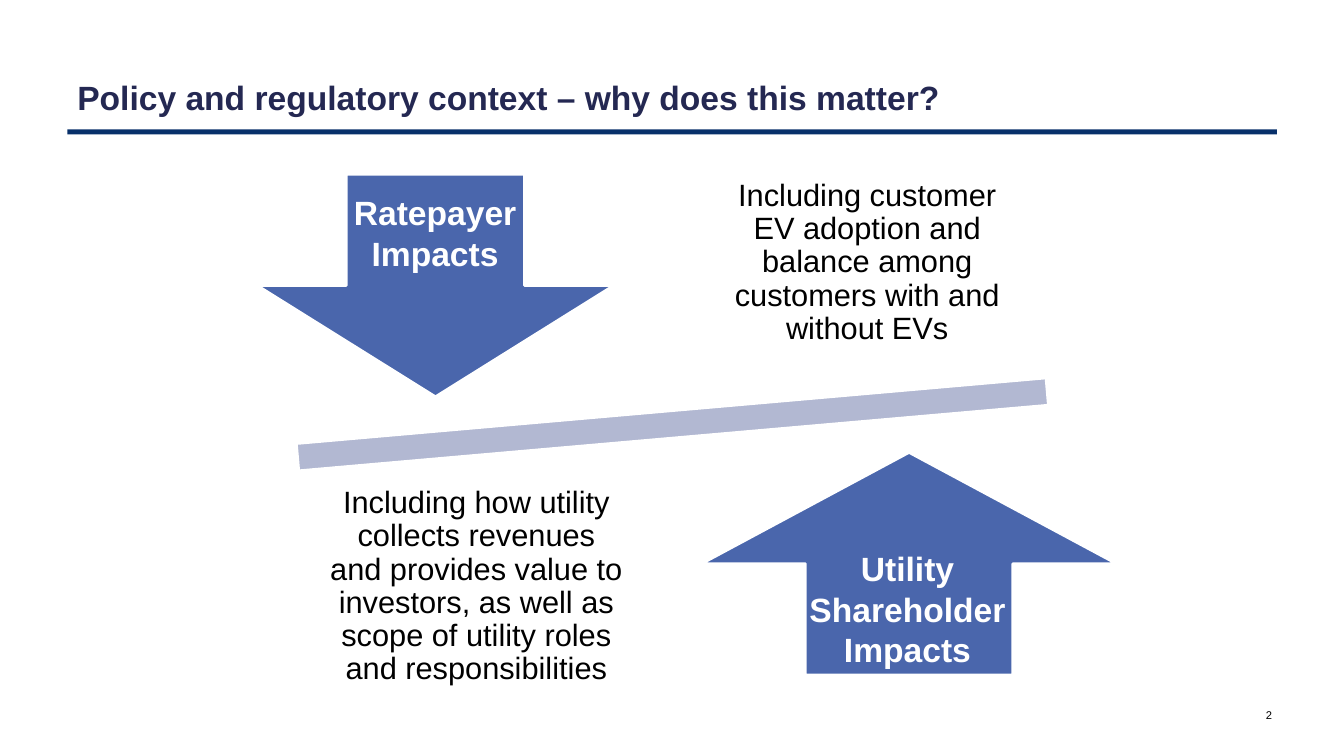
from pptx import Presentation
from pptx.dml.color import RGBColor
from pptx.enum.shapes import MSO_SHAPE as Shape
from pptx.enum.text import MSO_ANCHOR as Anchor, PP_ALIGN as Align
from pptx.util import Cm, Pt

COLORS = {
    "rule": "08306A",
    "title": "242852",
    "arrow": "4A66AC",
    "beam": "B2B8D2",
    "white": "FFFFFF",
    "black": "000000",
}


class SlideBuilder:
    font = "Arial"

    def __init__(self, slide):
        self.slide = slide

    def color(self, name):
        return RGBColor.from_string(COLORS[name])

    def shape(self, kind, box, fill, outlined=True, rotation=0):
        shape = self.slide.shapes.add_shape(kind, *map(Cm, box))
        shape.shadow.inherit = False
        shape.rotation = rotation
        shape.fill.solid()
        shape.fill.fore_color.rgb = self.color(fill)
        if outlined:
            shape.line.color.rgb = self.color("white")
            shape.line.width = Pt(2)
        else:
            shape.line.fill.background()

    def text(self, box, words, size, color="black", bold=False,
             align=Align.CENTER, anchor=Anchor.TOP, inset=None, spacing=None):
        frame = self.slide.shapes.add_textbox(*map(Cm, box)).text_frame
        frame.word_wrap = True
        frame.vertical_anchor = anchor
        if inset is not None:
            frame.margin_left = frame.margin_right = Cm(inset)
            frame.margin_top = frame.margin_bottom = Cm(inset)
        paragraph = frame.paragraphs[0]
        paragraph.alignment = align
        if spacing:
            paragraph.line_spacing = spacing
        run = paragraph.add_run()
        run.text = words
        run.font.name = self.font
        run.font.size = Pt(size)
        run.font.bold = bold
        run.font.color.rgb = self.color(color)

    def explanation(self, left, top, words):
        self.text((left, top, 8.31, 5.89), words, 22,
                  anchor=Anchor.MIDDLE, inset=0.43, spacing=0.9)

    def arrow_label(self, box, words):
        self.text(box, words, 24, "white", bold=True)


def main():
    deck = Presentation()
    deck.slide_width, deck.slide_height = Cm(33.87), Cm(19.05)
    page = SlideBuilder(deck.slides.add_slide(deck.slide_layouts[6]))

    page.shape(Shape.RECTANGLE, (1.7, 3.26, 30.48, 0.13), "rule", outlined=False)
    page.text((1.7, 1.8, 30.48, 1.27),
              "Policy and regulatory context – why does this matter?",
              24, "title", bold=True, align=Align.LEFT, anchor=Anchor.BOTTOM)
    page.text((31.04, 17.5, 1.27, 1.02), "2", 8,
              align=Align.RIGHT, anchor=Anchor.MIDDLE)

    page.shape(Shape.MATH_MINUS, (4.04, 9.22, 25.81, 2.95), "beam", rotation=355)

    page.shape(Shape.DOWN_ARROW, (6.48, 4.39, 8.99, 5.61), "arrow")
    page.explanation(17.7, 3.68, "Including customer EV adoption and balance "
                                 "among customers with and without EVs")

    page.shape(Shape.UP_ARROW, (17.68, 11.4, 10.46, 5.61), "arrow")
    page.explanation(7.85, 11.84, "Including how utility collects revenues and "
                                  "provides value to investors, as well as scope "
                                  "of utility roles and responsibilities")

    page.arrow_label((8.64, 4.72, 4.65, 2.31), "Ratepayer Impacts")
    page.arrow_label((19.91, 13.69, 5.92, 3.33), "Utility Shareholder Impacts")

    deck.save("out.pptx")


if __name__ == "__main__":
    main()
